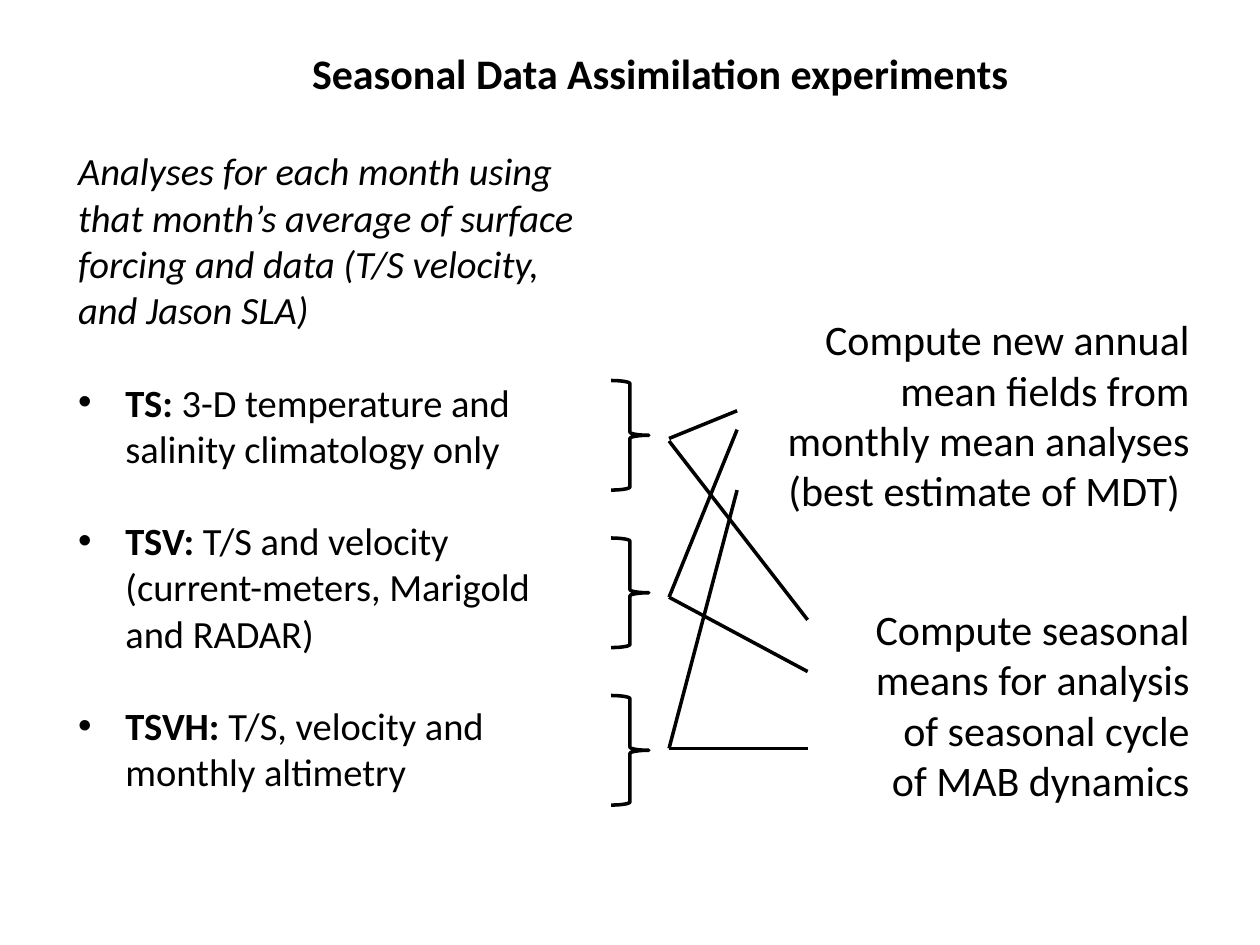
"""Build the slide on seasonal data assimilation experiments."""
from lxml.etree import SubElement
from pptx import Presentation
from pptx.dml.color import RGBColor
from pptx.enum.shapes import MSO_CONNECTOR, MSO_SHAPE
from pptx.enum.text import MSO_ANCHOR, MSO_AUTO_SIZE, PP_ALIGN
from pptx.oxml.ns import qn
from pptx.util import Inches, Pt

BLACK = RGBColor(0, 0, 0)
TITLE_FONT = {"name": "Calibri", "size": Pt(24), "bold": True}
INTRO_FONT = {"name": "Calibri", "size": Pt(22), "italic": True}
LABEL_FONT = {"name": "Calibri", "size": Pt(22), "bold": True}
DETAIL_FONT = {"name": "Calibri", "size": Pt(22), "bold": False}
OUTCOME_FONT = {"name": "Calibri", "size": Pt(24)}
FRAME = {"auto_size": MSO_AUTO_SIZE.NONE, "vertical_anchor": MSO_ANCHOR.TOP}

INTRO = ("Analyses for each month using that month’s average of surface "
         "forcing and data (T/S velocity, and Jason SLA)")
EXPERIMENTS = [
    ("TS: ", "3-D temperature and salinity climatology only"),
    ("TSV: ", "T/S and velocity (current-meters, Marigold and RADAR)"),
    ("TSVH: ", "T/S, velocity and monthly altimetry"),
]
OUTCOMES = [
    ("Compute new annual mean fields from monthly mean analyses "
     "(best estimate of MDT) ", (6, 2.44, 3.54, 1.72)),
    ("Compute seasonal means for analysis of seasonal cycle of MAB dynamics",
     (6.74, 4.74, 2.8, 1.72)),
]
LINK_START, ANNUAL_END, SEASONAL_END = 5.31, 5.85, 6.41
ANNUAL_LINKS = [(3.48, 3.26), (4.74, 3.41), (5.94, 3.89)]
SEASONAL_LINKS = [(3.5, 4.92), (4.74, 5.33), (5.94, 5.94)]


def set_format(target, values):
    """Set each named attribute on the target."""
    for name, value in values.items():
        setattr(target, name, value)


def place(shape, left, top, width, height):
    """Move and size a shape, in inches."""
    set_format(shape, {"left": Inches(left), "top": Inches(top),
                       "width": Inches(width), "height": Inches(height)})


def add_span(para, text, font):
    """Add a run of black text in the given font."""
    span = para.add_run()
    span.text = text
    set_format(span.font, font)
    span.font.color.rgb = BLACK


def fill_title(title):
    """Write the centred slide title."""
    place(title, 2.34, 0.33, 5.8, 0.5)
    set_format(title.text_frame, {**FRAME, "word_wrap": False})
    para = title.text_frame.paragraphs[0]
    para.alignment = PP_ALIGN.CENTER
    add_span(para, "Seasonal Data Assimilation experiments", TITLE_FONT)


def fill_body(body):
    """Write the introduction and the bulleted experiments."""
    place(body, 0.52, 1.12, 4.15, 5.28)
    frame = body.text_frame
    set_format(frame, {**FRAME, "word_wrap": True})
    intro = frame.paragraphs[0]
    properties = intro._p.get_or_add_pPr()
    set_margin = properties.set
    set_margin("marL", "0")
    set_margin("indent", "0")
    SubElement(properties, qn("a:buNone"))
    intro.space_before = Pt(0)
    add_span(intro, INTRO, INTRO_FONT)
    for label, detail in EXPERIMENTS:
        para = frame.add_paragraph()
        para.space_before = Pt(26.5)
        add_span(para, label, LABEL_FONT)
        add_span(para, detail, DETAIL_FONT)


def add_outcome(page, text, area):
    """Add a right-aligned outcome text."""
    box = page.shapes.add_textbox(*map(Inches, area))
    set_format(box.text_frame, {**FRAME, "word_wrap": True})
    para = box.text_frame.paragraphs[0]
    para.alignment = PP_ALIGN.RIGHT
    add_span(para, text, OUTCOME_FONT)


def style_line(line):
    """Make a line black and two points wide."""
    line.color.rgb = BLACK
    line.width = Pt(2)


def add_brace(page, top):
    """Add a right brace beside an experiment."""
    area = map(Inches, (4.85, top, 0.3, 0.87))
    brace = page.shapes.add_shape(MSO_SHAPE.RIGHT_BRACE, *area)
    brace.shadow.inherit = False
    brace.fill.background()
    style_line(brace.line)


def add_link(page, start, end):
    """Add a straight line from an experiment to an outcome."""
    link = page.shapes.add_connector(
        MSO_CONNECTOR.STRAIGHT, *map(Inches, start + end))
    style_line(link.line)
    SubElement(link._element.spPr, qn("a:effectLst"))


def main():
    """Build and save the deck."""
    deck = Presentation()
    set_format(deck, {"slide_width": Inches(10), "slide_height": Inches(7.5)})
    page = deck.slides.add_slide(deck.slide_layouts[1])
    fill_title(page.shapes.title)
    fill_body(page.placeholders[1])
    for row in range(len(EXPERIMENTS)):
        add_brace(page, 3.02 + 1.25 * row)
    for text, area in OUTCOMES:
        add_outcome(page, text, area)
    for end, links in ((ANNUAL_END, ANNUAL_LINKS),
                       (SEASONAL_END, SEASONAL_LINKS)):
        for start_height, end_height in links:
            add_link(page, (LINK_START, start_height), (end, end_height))
    deck.save("out.pptx")


if __name__ == "__main__":
    main()
